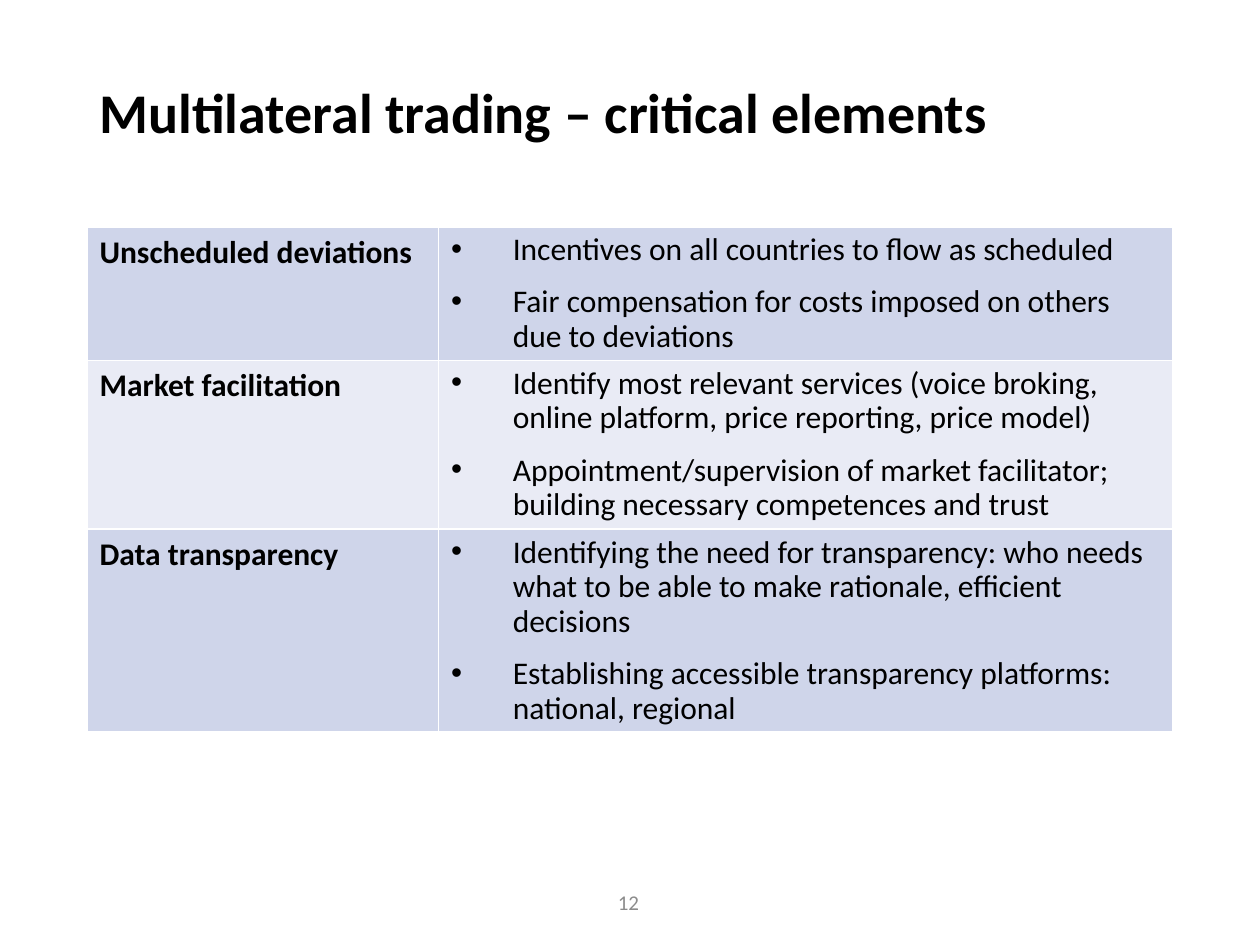
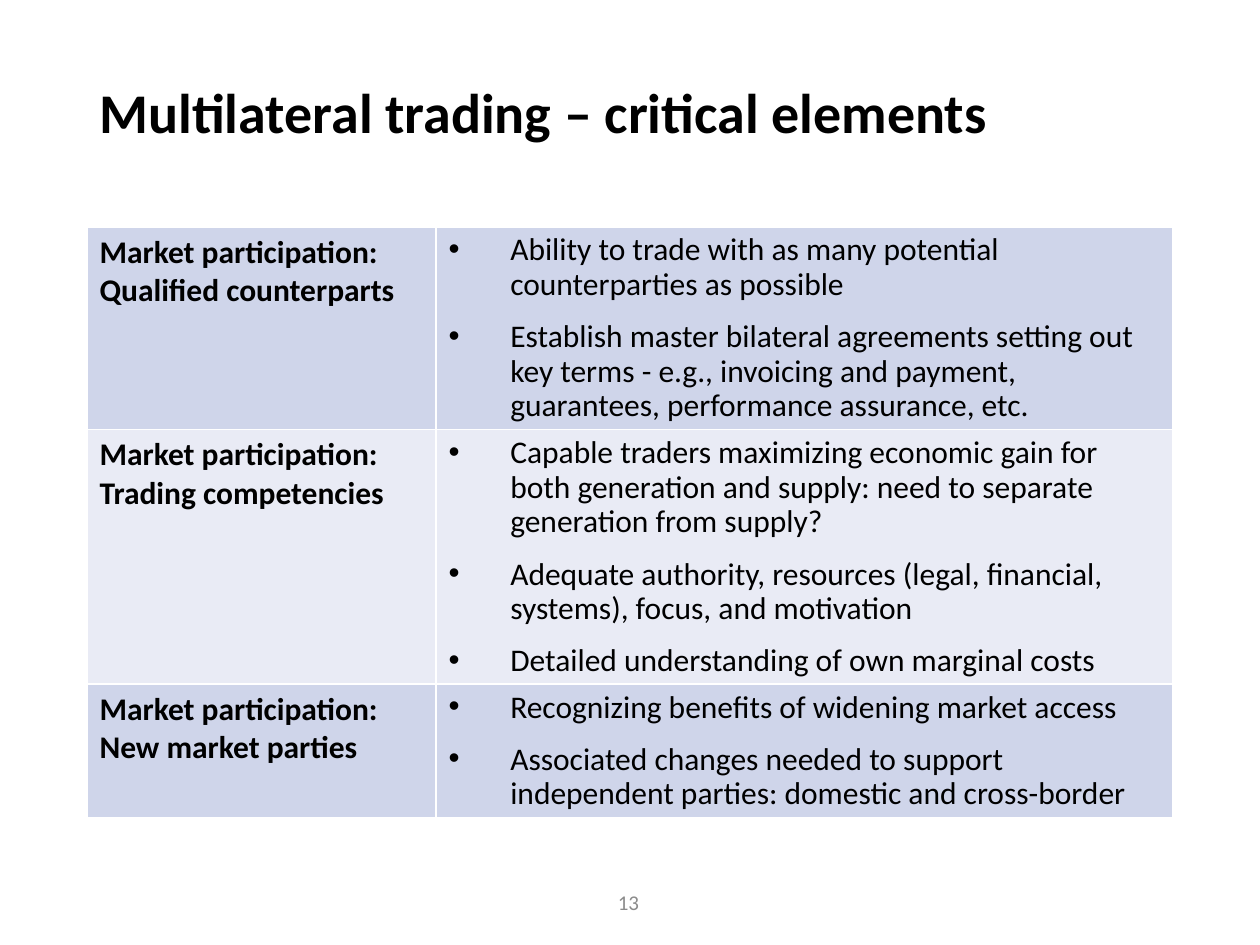
from dataclasses import dataclass

from lxml import etree
from pptx import Presentation
from pptx.dml.color import RGBColor
from pptx.enum.text import MSO_ANCHOR, PP_ALIGN
from pptx.oxml.ns import qn
from pptx.util import Inches, Pt

MIDDLE = MSO_ANCHOR.MIDDLE
LEFT, RIGHT = PP_ALIGN.LEFT, PP_ALIGN.RIGHT


@dataclass(frozen=True)
class Theme:
    font: str = "Calibri"
    ink: str = "000000"
    muted: str = "8C8C8C"
    border: str = "FFFFFF"
    bands: tuple = ("CFD5EA", "E9EBF5")
    title_size: int = 32
    body_size: int = 18
    number_size: int = 12
    line_spacing: float = 0.9


T = Theme()
WIDTH, HEIGHT = Inches(10), Inches(7.5)
MARGIN = int(WIDTH * 0.069)
CONTENT_W = WIDTH - 2 * MARGIN
TITLE_TOP, TITLE_H = int(HEIGHT * 0.084), int(HEIGHT * 0.136)
TABLE_TOP = int(HEIGHT * 0.24)
NUMBER_BOX = (Inches(2.92), Inches(6.96), Inches(2.25), Inches(0.4))
INDENT = Inches(0.49)

TITLE = "Multilateral trading – critical elements"

# Per slide: page number, label column width, then (row height, label lines, bullets)
SLIDES = [
    (12, 2.79, [
        (1.06, ["Unscheduled deviations"], [
            "Incentives on all countries to flow as scheduled",
            "Fair compensation for costs imposed on others due to deviations"]),
        (1.34, ["Market facilitation"], [
            "Identify most relevant services (voice broking, online platform, "
            "price reporting, price model)",
            "Appointment/supervision of market facilitator; building necessary "
            "competences and trust"]),
        (1.61, ["Data transparency"], [
            "Identifying the need for transparency: who needs what to be able to "
            "make rationale, efficient decisions",
            "Establishing accessible transparency platforms: national, regional"]),
    ]),
    (13, 2.77, [
        (1.61, ["Market participation: Qualified counterparts"], [
            "Ability to trade with as many potential counterparties as possible",
            "Establish master bilateral agreements setting out key terms - e.g., "
            "invoicing and payment, guarantees, performance assurance, etc."]),
        (2.02, ["Market participation:", "Trading competencies"], [
            "Capable traders maximizing economic gain for both generation and "
            "supply: need to separate generation from supply?",
            "Adequate authority, resources (legal, financial, systems), focus, "
            "and motivation",
            "Detailed understanding of own marginal costs"]),
        (1.06, ["Market participation:", "New market parties"], [
            "Recognizing benefits of widening market access",
            "Associated changes needed to support independent parties: domestic "
            "and cross-border"]),
    ]),
]


def write(tf, lines, size, color=T.ink, bold=False, align=LEFT, spacing=None, bullets=False):
    tf.word_wrap = True
    tf.text = "\n".join(lines)
    for i, p in enumerate(tf.paragraphs):
        if bullets:
            pPr = p._p.get_or_add_pPr()
            pPr.set("marL", str(INDENT))
            pPr.set("indent", str(-INDENT))
            etree.SubElement(pPr, qn("a:buFont")).set("typeface", "Arial")
            etree.SubElement(pPr, qn("a:buChar")).set("char", "•")
            if i:
                p.space_before = Pt(10)
        p.alignment = align
        if spacing:
            p.line_spacing = spacing
        for r in p.runs:
            r.font.name = T.font
            r.font.size = Pt(size)
            r.font.bold = bold
            r.font.color.rgb = RGBColor.from_string(color)


def style_cell(cell, fill):
    """Draw the four borders, then the fill, in the order the schema asks for."""
    tcPr = cell._tc.get_or_add_tcPr()
    for side in ("lnL", "lnR", "lnT", "lnB"):
        ln = etree.SubElement(tcPr, qn("a:" + side), w=str(Pt(1)))
        solid = etree.SubElement(ln, qn("a:solidFill"))
        etree.SubElement(solid, qn("a:srgbClr"), val=T.border)
    cell.fill.solid()
    cell.fill.fore_color.rgb = RGBColor.from_string(fill)


prs = Presentation()
prs.slide_width, prs.slide_height = WIDTH, HEIGHT

for number, label_w, rows in SLIDES:
    s = prs.slides.add_slide(prs.slide_layouts[6])

    title = s.shapes.add_textbox(MARGIN, TITLE_TOP, CONTENT_W, TITLE_H)
    write(title.text_frame, [TITLE], T.title_size, bold=True, spacing=T.line_spacing)

    page = s.shapes.add_textbox(*NUMBER_BOX)
    page.text_frame.vertical_anchor = MIDDLE
    write(page.text_frame, [str(number)], T.number_size, T.muted, align=RIGHT)

    table_h = Inches(sum(row[0] for row in rows))
    table = s.shapes.add_table(len(rows), 2, MARGIN, TABLE_TOP, CONTENT_W, table_h).table
    table.first_row = table.horz_banding = False
    table.columns[0].width = Inches(label_w)
    table.columns[1].width = CONTENT_W - Inches(label_w)

    for i, (row_h, label, points) in enumerate(rows):
        table.rows[i].height = Inches(row_h)
        label_cell, points_cell = table.rows[i].cells
        for cell in (label_cell, points_cell):
            style_cell(cell, T.bands[i % 2])
        write(label_cell.text_frame, label, T.body_size, bold=True)
        write(points_cell.text_frame, points, T.body_size, spacing=T.line_spacing, bullets=True)

prs.save("out.pptx")
